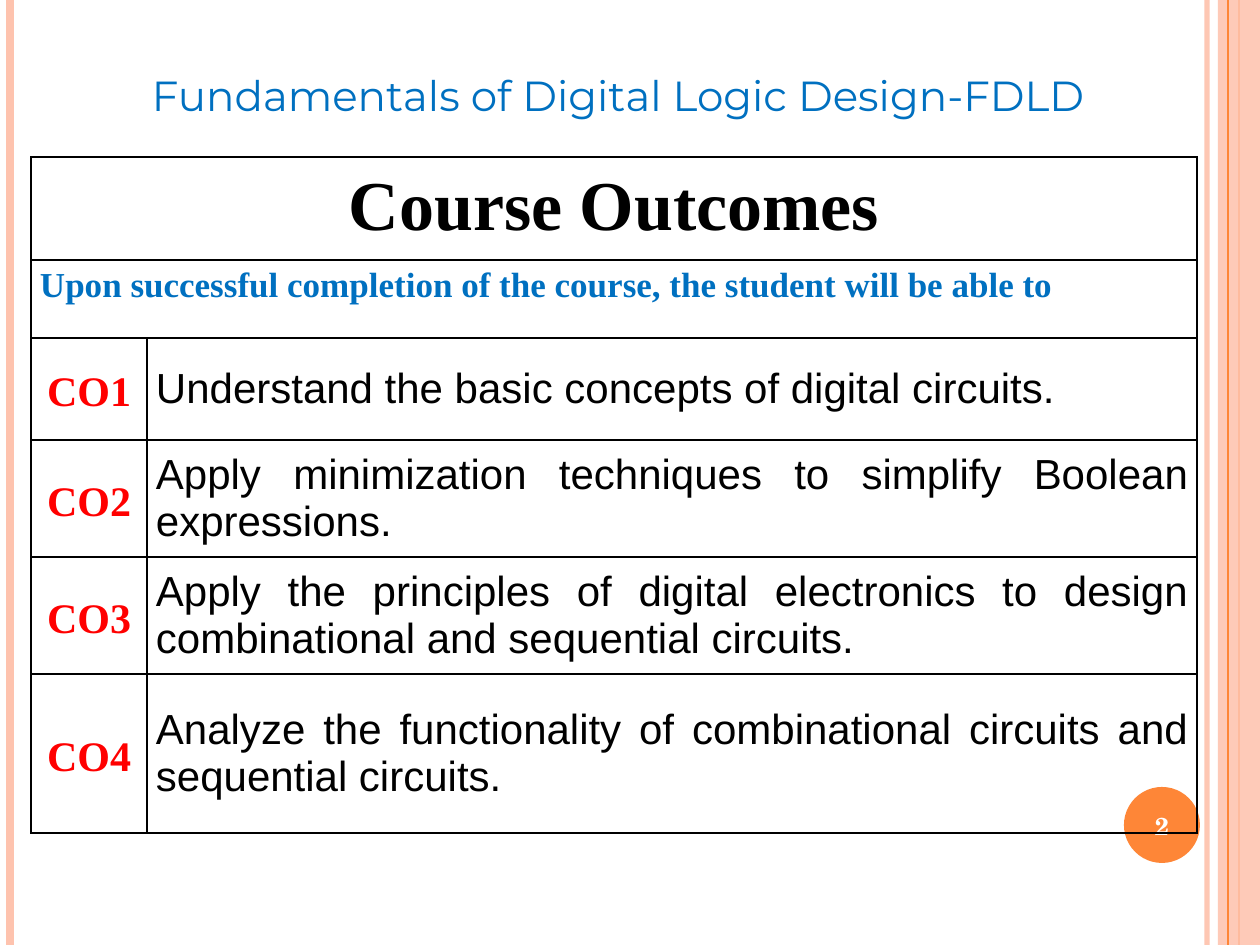
from typing import NamedTuple

from lxml import etree
from pptx import Presentation, util as u
from pptx.dml.color import RGBColor
from pptx.enum import shapes, text
from pptx.oxml import ns

PX_PER_INCH = 126
COLORS = {
    "blush": "FEC3AE",
    "orange": "FE8637",
    "blue": "0070C0",
    "red": "FF0000",
    "black": "000000",
    "white": "FFFFFF",
}
SERIF = "Times New Roman"
ALIGN = text.PP_ALIGN
ANCHOR = text.MSO_ANCHOR


class Stripe(NamedTuple):
    x: int
    color: str
    points: float
    opacity: int = 100


class Outcome(NamedTuple):
    code: str
    statement: str
    height: int


LEFT_STRIPES = [
    Stripe(1207, "blush", 3, 93),
    Stripe(10, "blush", 4.5),
    Stripe(1239, "orange", 1.5),
]
EDGE_STRIPE = Stripe(1228, "orange", 0.75)

OUTCOMES = [
    Outcome("CO1", "Understand the basic concepts of digital circuits.", 102),
    Outcome("CO2", "Apply minimization techniques to simplify Boolean expressions.", 117),
    Outcome("CO3", "Apply the principles of digital electronics to design "
            "combinational and sequential circuits.", 117),
    Outcome("CO4", "Analyze the functionality of combinational circuits and "
            "sequential circuits.", 159),
]
HEADER_HEIGHTS = [103, 78]
COLUMN_WIDTHS = [116, 1050]


def px(n: int) -> u.Emu:
    return u.Emu(round(n * 914400 / PX_PER_INCH))


def box(*lengths: int) -> list:
    return [px(n) for n in lengths]


def rgb(name: str) -> RGBColor:
    return RGBColor.from_string(COLORS[name])


def set_opacity(sp, percent: int) -> None:
    color = sp._element.spPr.find(".//" + ns.qn("a:srgbClr"))
    etree.SubElement(color, ns.qn("a:alpha"), val=str(percent * 1000))


def write(tf, words: str, *, size: float, font: str, color: str, bold=False,
          align=ALIGN.LEFT, spacing=1.0) -> None:
    tf.word_wrap = True
    p = tf.paragraphs[0]
    p.alignment = align
    p.line_spacing = spacing
    p.space_before = u.Pt(0)
    r = p.add_run()
    r.text = words
    r.font.size = u.Pt(size)
    r.font.name = font
    r.font.bold = bold
    r.font.color.rgb = rgb(color)


def add_stripe(s, stripe: Stripe) -> None:
    line = s.shapes.add_connector(
        shapes.MSO_CONNECTOR.STRAIGHT, *box(stripe.x, 0, stripe.x, 945))
    line.line.color.rgb = rgb(stripe.color)
    line.line.width = u.Pt(stripe.points)
    if stripe.opacity < 100:
        set_opacity(line, stripe.opacity)
    etree.SubElement(line._element.spPr, ns.qn("a:effectLst"))


def add_block(s, kind, bounds: list, color: str):
    sp = s.shapes.add_shape(kind, *bounds)
    sp.shadow.inherit = False
    sp.fill.solid()
    sp.fill.fore_color.rgb = rgb(color)
    sp.line.fill.background()
    return sp


def style_cell(cell) -> None:
    """Give the cell black borders, no fill and tight margins."""
    tc_pr = cell._tc.get_or_add_tcPr()
    for side in ("lnL", "lnR", "lnT", "lnB"):
        ln = etree.SubElement(tc_pr, ns.qn("a:" + side), w=str(u.Pt(1)))
        fill = etree.SubElement(ln, ns.qn("a:solidFill"))
        etree.SubElement(fill, ns.qn("a:srgbClr"), val=COLORS["black"])
    cell.fill.background()
    cell.margin_left = cell.margin_right = px(9)
    cell.margin_top = cell.margin_bottom = 0


def add_outcomes_table(s) -> None:
    heights = HEADER_HEIGHTS + [o.height for o in OUTCOMES]
    table = s.shapes.add_table(
        len(heights), len(COLUMN_WIDTHS),
        *box(31, 157, sum(COLUMN_WIDTHS), sum(heights))).table
    table.first_row = table.horz_banding = False
    for column, width in zip(table.columns, COLUMN_WIDTHS):
        column.width = px(width)
    for row, height in zip(table.rows, heights):
        row.height = px(height)
    for cell in table.iter_cells():
        style_cell(cell)
    for i in range(len(HEADER_HEIGHTS)):
        table.cell(i, 0).merge(table.cell(i, 1))

    write(table.cell(0, 0).text_frame, "Course Outcomes", size=40, font=SERIF,
          color="black", bold=True, align=ALIGN.CENTER, spacing=1.15)
    write(table.cell(1, 0).text_frame,
          "Upon successful completion of the course, the student will be able to",
          size=20, font=SERIF, color="blue", bold=True, spacing=1.15)
    for i, outcome in enumerate(OUTCOMES, len(HEADER_HEIGHTS)):
        code, statement = table.cell(i, 0), table.cell(i, 1)
        code.vertical_anchor = statement.vertical_anchor = ANCHOR.MIDDLE
        write(code.text_frame, outcome.code, size=24, font=SERIF, color="red",
              bold=True, align=ALIGN.CENTER, spacing=1.15)
        write(statement.text_frame, outcome.statement, size=24, font="Arial",
              color="black", align=ALIGN.JUSTIFY)


def main() -> None:
    prs = Presentation()
    prs.slide_width, prs.slide_height = box(1260, 945)
    s = prs.slides.add_slide(prs.slide_layouts[5])
    s.background.fill.solid()
    s.background.fill.fore_color.rgb = rgb("white")

    title = s.shapes.title
    title.left, title.top, title.width, title.height = box(35, 63, 1166, 63)
    title.text_frame.vertical_anchor = ANCHOR.TOP
    write(title.text_frame, "Fundamentals of Digital Logic Design-FDLD",
          size=24, font="Montserrat", color="blue", align=ALIGN.CENTER)

    for stripe in LEFT_STRIPES:
        add_stripe(s, stripe)
    band = add_block(s, shapes.MSO_SHAPE.RECTANGLE, box(1218, 0, 42, 945), "blush")
    set_opacity(band, 87)
    add_stripe(s, EDGE_STRIPE)

    add_block(s, shapes.MSO_SHAPE.OVAL, box(1124, 787, 76, 76), "orange")
    number = s.shapes.add_textbox(*box(1120, 790, 84, 72)).text_frame
    number.vertical_anchor = ANCHOR.MIDDLE
    write(number, "2", size=14, font="TeX Gyre Schola", color="white", bold=True,
          align=ALIGN.CENTER)

    add_outcomes_table(s)
    prs.save("out.pptx")


if __name__ == "__main__":
    main()
